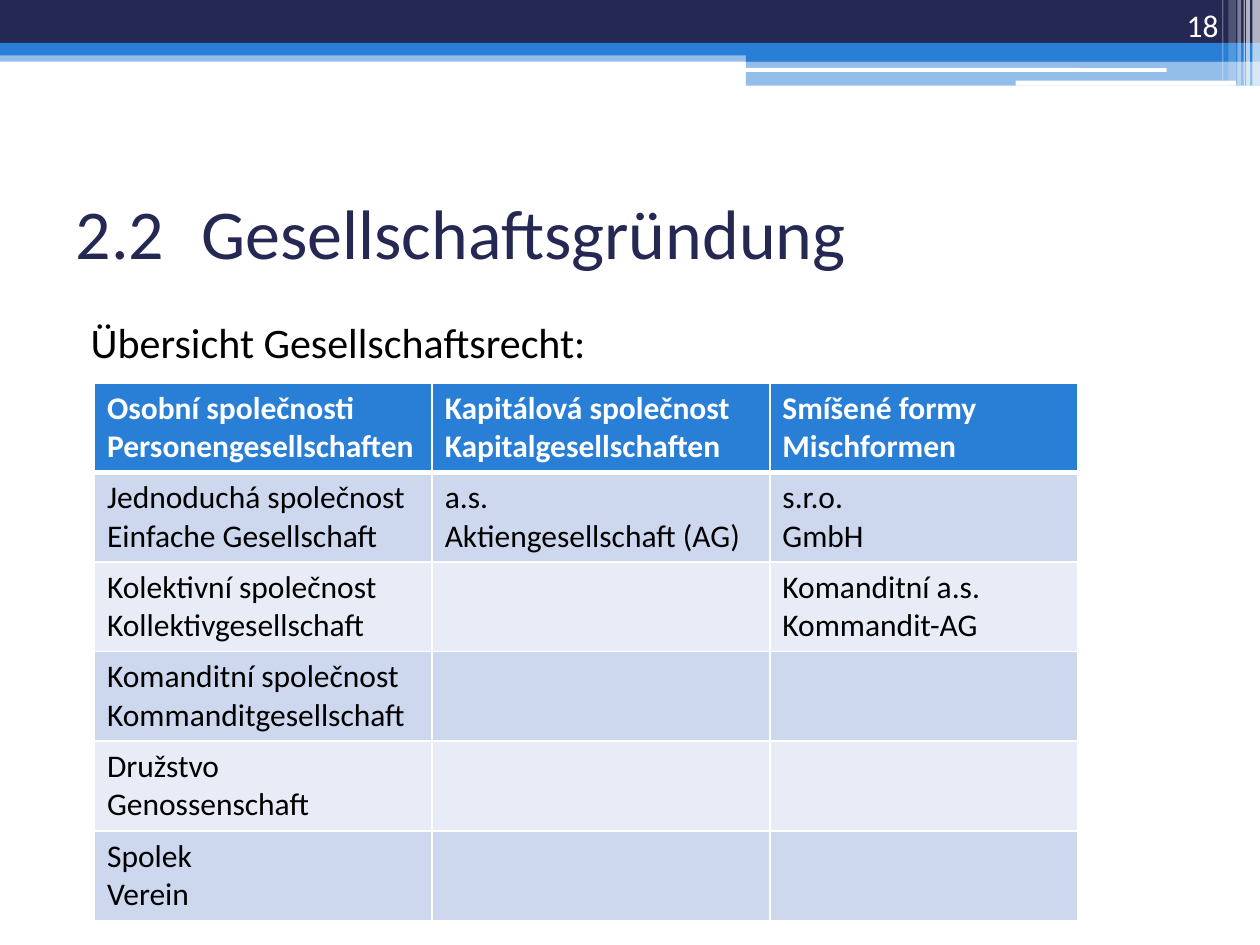
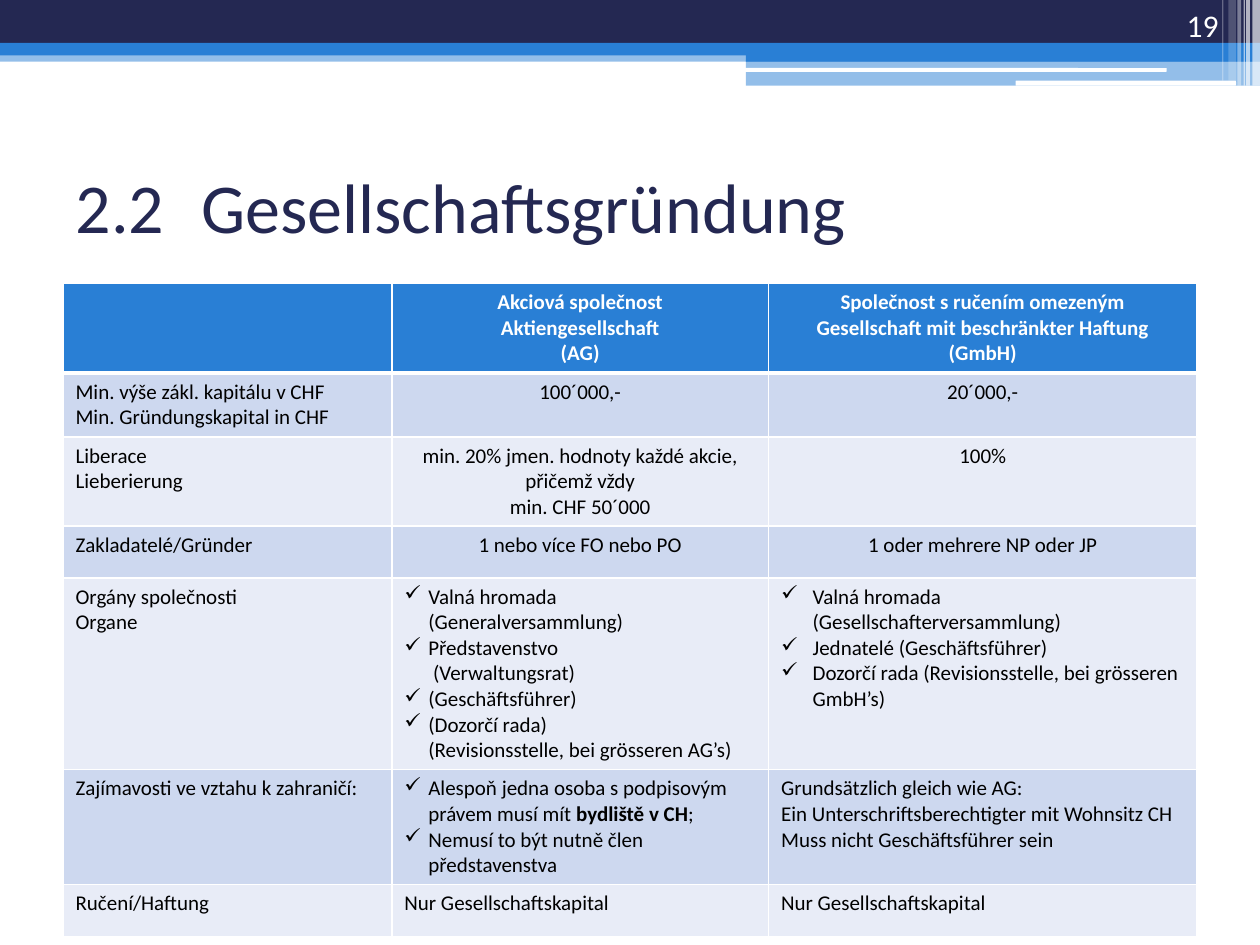
from collections import namedtuple

from lxml.etree import SubElement
from pptx import Presentation
from pptx.dml.color import RGBColor
from pptx.enum.shapes import MSO_SHAPE
from pptx.enum.text import MSO_ANCHOR, MSO_AUTO_SIZE, PP_ALIGN
from pptx.oxml.ns import qn
from pptx.util import Pt

EMU_PER_PX = 9144  # 100 px to the inch
FONT = "Calibri"
COLORS = {
    "navy": "242852",
    "blue": "297FD5",
    "white": "FFFFFF",
    "black": "000000",
    "row_dark": "CDD8EF",
    "row_light": "E8ECF7",
}
TITLE = "2.2\tGesellschaftsgründung"
CHECK = "✓"
BOLD_MARK = "**"

Box = namedtuple("Box", "left top width height")
PAGE = Box(0, 0, 1000, 750)
NUMBER_BOX = Box(894, 0, 83, 40)

# Header bands: box, colour, opacity in percent
BANDS = [
    (Box(0, 40, 1000, 9), "blue", 50),
    (Box(0, 0, 1000, 34), "navy", 100),
    (Box(0, 34, 1000, 10), "blue", 100),
    (Box(592, 39, 408, 10), "blue", 100),
    (Box(592, 48, 408, 20), "blue", 50),
]
ROUNDED_LINES = [
    (Box(591, 54, 335, 3), "white", 100),
    (Box(806, 64, 175, 4), "white", 100),
]
# Vertical stripes in the corner: left, width, height, opacity
STRIPES = [
    (994, 6, 68, 65),
    (989, 3, 68, 65),
    (987, 1, 68, 60),
    (982, 3, 68, 40),
    (975, 6, 64, 20),
    (970, 1, 64, 30),
]

# Table texts: "\n" starts a paragraph, "\v" breaks a line inside it
COMPANY_FORMS = [
    ["Osobní společnosti\nPersonengesellschaften",
     "Kapitálová společnost\nKapitalgesellschaften",
     "Smíšené formy\nMischformen"],
    ["Jednoduchá společnost\nEinfache Gesellschaft",
     "a.s.\nAktiengesellschaft (AG)",
     "s.r.o.\nGmbH"],
    ["Kolektivní společnost\nKollektivgesellschaft", "",
     "Komanditní a.s.\nKommandit-AG"],
    ["Komanditní společnost\nKommanditgesellschaft", "", ""],
    ["Družstvo\nGenossenschaft", "", ""],
    ["Spolek\nVerein", "", ""],
]
AG_AND_GMBH = [
    ["",
     "Akciová společnost\nAktiengesellschaft\n(AG)",
     "Společnost s ručením omezeným\n"
     "Gesellschaft mit beschränkter Haftung (GmbH)"],
    ["Min. výše zákl. kapitálu v CHF\nMin. Gründungskapital in CHF",
     "100´000,-", "20´000,-"],
    ["Liberace\nLieberierung",
     "min. 20% jmen. hodnoty každé akcie, přičemž vždy\nmin. CHF 50´000",
     "100%"],
    ["Zakladatelé/Gründer", "1 nebo více FO nebo PO",
     "1 oder mehrere NP oder JP"],
    ["Orgány společnosti\nOrgane",
     "✓Valná hromada (Generalversammlung)\n"
     "✓Představenstvo\v (Verwaltungsrat)\n"
     "✓(Geschäftsführer)\n"
     "✓(Dozorčí rada)\v(Revisionsstelle, bei grösseren AG’s)",
     "✓Valná hromada (Gesellschafterversammlung)\n"
     "✓Jednatelé (Geschäftsführer)\n"
     "✓Dozorčí rada (Revisionsstelle, bei grösseren GmbH’s)"],
    ["Zajímavosti ve vztahu k zahraničí:",
     "✓Alespoň jedna osoba s podpisovým právem musí mít "
     "**bydliště v CH**;\n"
     "✓Nemusí to být nutně člen představenstva",
     "Grundsätzlich gleich wie AG:\n"
     "Ein Unterschriftsberechtigter mit Wohnsitz CH\n"
     "Muss nicht Geschäftsführer sein"],
    ["Ručení/Haftung", "Nur Gesellschaftskapital",
     "Nur Gesellschaftskapital"],
]


def emu(px):
    return px * EMU_PER_PX


def place(box):
    return [emu(length) for length in box]


def color(name):
    return RGBColor.from_string(COLORS[name])


def move(shape, box):
    shape.left, shape.top, shape.width, shape.height = place(box)


def format_font(font, size, color_name, bold=False):
    font.name = FONT
    font.size = Pt(size)
    font.bold = bold
    font.color.rgb = color(color_name)


def write_line(frame, text, size, color_name, align=PP_ALIGN.LEFT):
    frame.word_wrap = True
    frame.auto_size = MSO_AUTO_SIZE.NONE
    frame.text = text
    para = frame.paragraphs[0]
    para.alignment = align
    for span in para.runs:
        format_font(span.font, size, color_name)
    return para


def set_indent(para, margin, first_line, bullet=None):
    properties = para._p.get_or_add_pPr()
    properties.set("marL", str(emu(margin)))
    properties.set("indent", str(emu(first_line)))
    if bullet:
        SubElement(properties, qn("a:buChar")).set("char", bullet)
    else:
        SubElement(properties, qn("a:buNone"))


# Page header
def add_band(page, box, color_name, opacity, preset=MSO_SHAPE.RECTANGLE):
    band = page.shapes.add_shape(preset, *place(box))
    band.shadow.inherit = False
    band.line.fill.background()
    band.fill.solid()
    band.fill.fore_color.rgb = color(color_name)
    if opacity < 100:
        fill_color = band._element.spPr.find(".//" + qn("a:srgbClr"))
        SubElement(fill_color, qn("a:alpha")).set("val", str(opacity * 1000))


def add_header(page, number):
    for band in BANDS:
        add_band(page, *band)
    for line in ROUNDED_LINES:
        add_band(page, *line, MSO_SHAPE.ROUNDED_RECTANGLE)
    for left, width, height, opacity in STRIPES:
        add_band(page, Box(left, 0, width, height), "white", opacity)
    frame = page.shapes.add_textbox(*place(NUMBER_BOX)).text_frame
    frame.vertical_anchor = MSO_ANCHOR.BOTTOM
    write_line(frame, str(number), 18, "white", PP_ALIGN.RIGHT)


def add_page(deck, layout_index, number, title_box):
    page = deck.slides.add_slide(deck.slide_layouts[layout_index])
    add_header(page, number)
    title = page.shapes.title
    move(title, title_box)
    title.text_frame.vertical_anchor = MSO_ANCHOR.MIDDLE
    write_line(title.text_frame, TITLE, 40, "navy")
    return page


def fill_body(page, box, text):
    body = page.placeholders[1]
    move(body, box)
    para = write_line(body.text_frame, text, 24, "black")
    para.space_before = Pt(3)
    set_indent(para, 12, 0)


# Tables
def set_borders(cell, row):
    widths = {"L": 1, "R": 1, "T": 3 if row == 1 else 1,
              "B": 3 if row == 0 else 1}
    properties = cell._tc.get_or_add_tcPr()
    for side, width in widths.items():
        line = SubElement(properties, qn("a:ln" + side))
        line.set("w", str(Pt(width)))
        fill = SubElement(line, qn("a:solidFill"))
        SubElement(fill, qn("a:srgbClr")).set("val", COLORS["white"])


def write_cell(cell, text, size, header, align, bullet_indent):
    frame = cell.text_frame
    frame.text = text.replace("\v", " ")
    for para, line in zip(frame.paragraphs, text.split("\n")):
        para.alignment = align
        if line.startswith(CHECK):
            set_indent(para, bullet_indent, -bullet_indent, CHECK)
        head, *rest = line.removeprefix(CHECK).split(BOLD_MARK)
        para.text = head
        for piece in rest:
            para.add_run().text = piece
        bold_text = rest[0] if rest else None
        for span in para.runs:
            format_font(span.font, size, "white" if header else "black",
                        header or span.text == bold_text)


def add_grid(page, box, texts, widths, heights, size,
             centred_rows=0, bullet_indents=(0, 0, 0)):
    frame = page.shapes.add_table(len(texts), len(widths), *place(box))
    table = frame.table
    for column, width in zip(table.columns, widths):
        column.width = emu(width)
    for row, height in zip(table.rows, heights):
        row.height = emu(height)
    for row, row_texts in enumerate(texts):
        stripe = "row_dark" if row % 2 else "row_light"
        for column, text in enumerate(row_texts):
            cell = table.cell(row, column)
            set_borders(cell, row)
            cell.fill.solid()
            cell.fill.fore_color.rgb = color(stripe if row else "blue")
            centred = column > 0 and row < centred_rows
            align = PP_ALIGN.CENTER if centred else PP_ALIGN.LEFT
            write_cell(cell, text, size, row == 0, align,
                       bullet_indents[column])


# Slides
def add_overview_page(deck):
    page = add_page(deck, 1, 18, Box(50, 125, 900, 117))
    fill_body(page, Box(50, 246, 900, 473), "Übersicht Gesellschaftsrecht:")
    add_grid(page, Box(75, 304, 780, 420), COMPANY_FORMS,
             [268, 268, 244], [61, 67, 67, 61, 67, 67], 18)


def add_comparison_page(deck):
    page = add_page(deck, 5, 19, Box(50, 125, 900, 77))
    add_grid(page, Box(50, 225, 900, 491), AG_AND_GMBH,
             [261, 299, 340], [61] + [41] * 6, 12,
             centred_rows=4, bullet_indents=(0, 19, 25))


def main():
    deck = Presentation()
    deck.slide_width = emu(PAGE.width)
    deck.slide_height = emu(PAGE.height)
    add_overview_page(deck)
    add_comparison_page(deck)
    deck.save("out.pptx")


if __name__ == "__main__":
    main()
